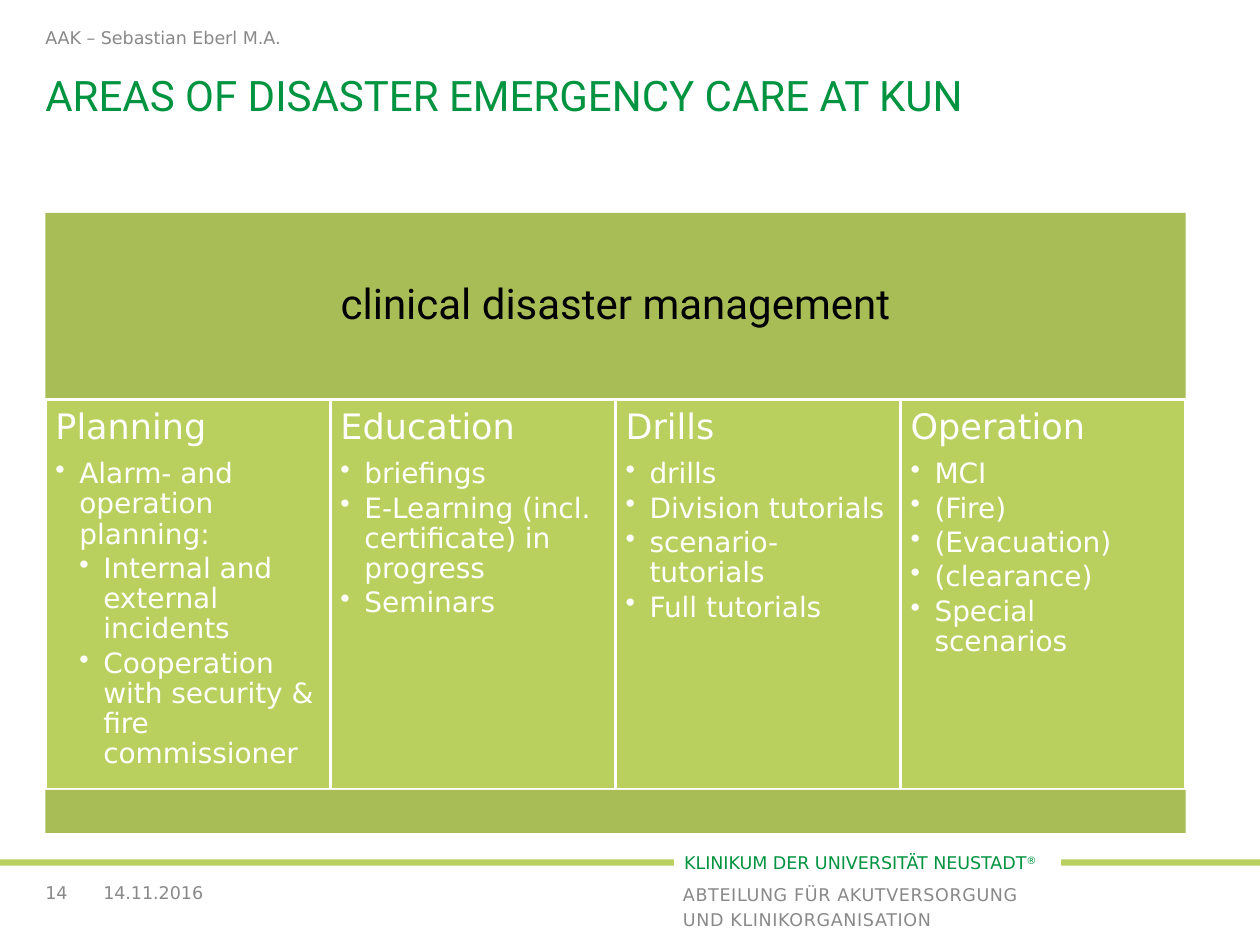
from pptx import Presentation
from pptx.dml.color import RGBColor
from pptx.enum.shapes import MSO_SHAPE
from pptx.enum.text import MSO_ANCHOR, PP_ALIGN
from pptx.oxml.ns import qn
from pptx.util import Inches, Pt

RECT = MSO_SHAPE.RECTANGLE
TOP, MIDDLE = MSO_ANCHOR.TOP, MSO_ANCHOR.MIDDLE
LEFT, CENTER = PP_ALIGN.LEFT, PP_ALIGN.CENTER

COLORS = {"band": "A8BD55", "lime": "B9D05E", "green": "009440",
          "grey": "898989", "white": "FFFFFF", "black": "000000"}
BODY, HEAD = "DejaVu Sans", "Roboto"

# Content
TITLE = "AREAS OF DISASTER EMERGENCY CARE AT KUN"
BANNER = "clinical disaster management"
CLINIC = "KLINIKUM DER UNIVERSITÄT NEUSTADT"
INSTITUTE = ["ABTEILUNG FÜR AKUTVERSORGUNG", "UND KLINIKORGANISATION"]
SMALL_TEXTS = [  # text, box
    ("AAK – Sebastian Eberl M.A.", (0.36, 0.2, 9.02, 0.2)),
    ("14", (0.36, 6.98, 0.45, 0.2)),
    ("14.11.2016", (0.82, 6.98, 2.33, 0.2)),
]
AREAS = [  # heading, [(bullet level, text)]
    ("Planning", [(1, "Alarm- and operation planning:"),
                  (2, "Internal and external incidents"),
                  (2, "Cooperation with security & fire commissioner")]),
    ("Education", [(1, "briefings"),
                   (1, "E-Learning (incl. certificate) in progress"),
                   (1, "Seminars")]),
    ("Drills", [(1, "drills"), (1, "Division tutorials"),
                (1, "scenario-tutorials"), (1, "Full tutorials")]),
    ("Operation", [(1, "MCI"), (1, "(Fire)"), (1, "(Evacuation)"),
                   (1, "(clearance)"), (1, "Special scenarios")]),
]

# Layout
X, WIDTH = 0.36, 9.05
BANNER_Y, AREA_Y, FOOT_Y, END_Y = 1.69, 3.17, 6.27, 6.61
INDENT = 0.19

prs = Presentation()
prs.slide_width, prs.slide_height = Inches(10), Inches(7.5)
s = prs.slides.add_slide(prs.slide_layouts[6])


def color(name):
    return RGBColor.from_string(COLORS[name])


def set_frame(sp, inset_x=0, inset_y=0, anchor=TOP, wrap=True):
    tf = sp.text_frame
    values = {"margin_left": Inches(inset_x), "margin_right": Inches(inset_x),
              "margin_top": Inches(inset_y), "margin_bottom": Inches(inset_y),
              "vertical_anchor": anchor, "word_wrap": wrap}
    for name, value in values.items():
        setattr(tf, name, value)
    return tf


def add_box(box, fill, line=None):
    sp = s.shapes.add_shape(RECT, *map(Inches, box))
    sp.shadow.inherit = False
    sp.fill.solid()
    sp.fill.fore_color.rgb = color(fill)
    if line:
        sp.line.color.rgb = color(line)
        sp.line.width = Pt(2)
    else:
        sp.line.fill.background()
    return sp


def add_text_box(box, **frame):
    return set_frame(s.shapes.add_textbox(*map(Inches, box)), **frame)


def add_run(p, text, size, fill, font=BODY):
    r = p.add_run()
    r.text = text
    r.font.size, r.font.name = Pt(size), font
    r.font.color.rgb = color(fill)
    return r


def write(tf, text, size, fill, font=BODY, **paragraph):
    first = tf.paragraphs[0]
    p = tf.add_paragraph() if first.runs else first
    for name, value in {"alignment": LEFT, **paragraph}.items():
        setattr(p, name, value)
    return p, add_run(p, text, size, fill, font)


def add_bullet(p, level):
    pPr = p._p.get_or_add_pPr()
    pPr.set("marL", str(Inches(INDENT * level)))
    pPr.set("indent", str(-Inches(INDENT)))
    bullet = pPr.makeelement(qn("a:buChar"), {"char": "•"})
    pPr.append(bullet)


# Footer rule with clinic and institute
add_box((0, 6.82, 10, 0.05), "lime")
tf = add_text_box((5.42, 6.99, 2.99, 0.39))
for line in INSTITUTE:
    p, r = write(tf, line, 10, "grey", line_spacing=Pt(14))
    r._r.get_or_add_rPr().set("spc", "40")
tf = set_frame(add_box((5.35, 6.74, 3.07, 0.21), "white"), 0.08, 0.02, wrap=False)
p, r = write(tf, CLINIC, 10, "green")
r = add_run(p, "®", 10, "green")
r._r.get_or_add_rPr().set("baseline", "30000")

# Title
write(add_text_box((X, 0.55, 9.02, 0.87)), TITLE, 24, "green", HEAD)

# Banner above the areas
banner = add_box((X, BANNER_Y, WIDTH, AREA_Y - BANNER_Y), "band")
write(set_frame(banner, 0.1, 0.1, MIDDLE), BANNER, 24, "black", HEAD,
      alignment=CENTER, line_spacing=0.9)

# One column per area
col_w = WIDTH / len(AREAS)
for i, (heading, bullets) in enumerate(AREAS):
    column = add_box((X + i * col_w, AREA_Y, col_w, FOOT_Y - AREA_Y), "lime", "white")
    tf = set_frame(column, 0.08, 0.08)
    write(tf, heading, 20, "white", line_spacing=0.9, space_after=Pt(7))
    for level, text in bullets:
        p, r = write(tf, text, 16, "white", line_spacing=0.9,
                     space_after=Pt(2.4), level=level)
        add_bullet(p, level)

# Closing band
add_box((X, FOOT_Y, WIDTH, END_Y - FOOT_Y), "band")

# Author, page number and date
for text, box in SMALL_TEXTS:
    write(add_text_box(box, anchor=MIDDLE), text, 10, "grey")

prs.save("out.pptx")
